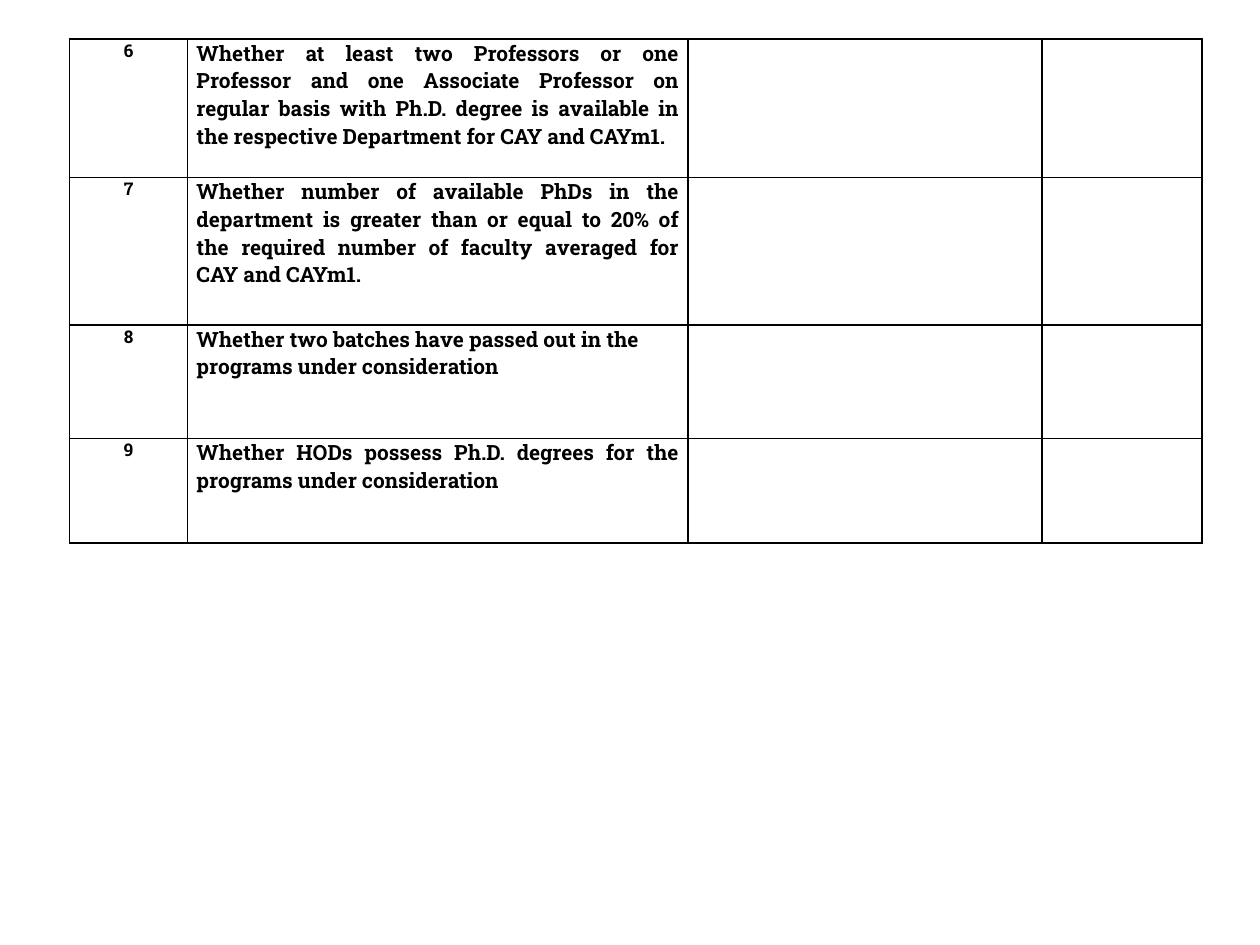
from lxml.etree import SubElement
from pptx import Presentation
from pptx.dml.color import RGBColor
from pptx.enum.text import PP_ALIGN as Align
from pptx.oxml.ns import qn
from pptx.util import Inches, Pt

COLORS = {"ink": "000000", "paper": "FFFFFF"}
FONT = "Roboto Slab"
COLUMN_WIDTHS = [0.94, 3.97, 2.81, 1.27]
# Row height, number, criterion, alignment of the criterion
CRITERIA = [
    (1.1, "6", "Whether at least two Professors or one Professor and one "
     "Associate Professor on regular basis with Ph.D. degree is available in "
     "the respective Department for CAY and CAYm1.", Align.JUSTIFY),
    (1.17, "7", "Whether number of available PhDs in the department is greater "
     "than or equal to 20% of the required number of faculty averaged for CAY "
     "and CAYm1.", Align.JUSTIFY),
    (0.9, "8", "Whether two batches have passed out in the programs under "
     "consideration", Align.LEFT),
    (0.83, "9", "Whether HODs possess Ph.D. degrees for the programs under "
     "consideration", Align.JUSTIFY),
]


def style_cell(cell):
    """Give the cell black borders, a plain fill and narrow margins."""
    properties = cell._tc.get_or_add_tcPr()
    for side in ("lnL", "lnR", "lnT", "lnB"):
        line = SubElement(properties, qn(f"a:{side}"), w=str(Pt(1)))
        fill = SubElement(line, qn("a:solidFill"))
        SubElement(fill, qn("a:srgbClr"), val=COLORS["ink"])
    cell.fill.solid()
    cell.fill.fore_color.rgb = RGBColor.from_string(COLORS["paper"])
    cell.margin_left = cell.margin_right = Inches(0.07)
    cell.margin_top = cell.margin_bottom = 0


def write_cell(cell, text, size, alignment):
    paragraph = cell.text_frame.paragraphs[0]
    paragraph.alignment = alignment
    run = paragraph.add_run()
    run.text = text
    run.font.name = FONT
    run.font.size = Pt(size)
    run.font.bold = True
    run.font.color.rgb = RGBColor.from_string(COLORS["ink"])


def add_criteria_table(slide):
    height = sum(row[0] for row in CRITERIA)
    frame = slide.shapes.add_table(
        len(CRITERIA), len(COLUMN_WIDTHS), Inches(0.55), Inches(0.31),
        Inches(sum(COLUMN_WIDTHS)), Inches(height))
    table = frame.table
    table.first_row = table.horz_banding = False
    for column, width in zip(table.columns, COLUMN_WIDTHS):
        column.width = Inches(width)
    for cell in table.iter_cells():
        style_cell(cell)
    for row, (height, number, criterion, alignment) in zip(table.rows, CRITERIA):
        row.height = Inches(height)
        write_cell(row.cells[0], number, 10, Align.CENTER)
        write_cell(row.cells[1], criterion, 12, alignment)


def main():
    presentation = Presentation()
    presentation.slide_width = Inches(10)
    presentation.slide_height = Inches(7.5)
    # Blank layout: the slide holds only the table
    slide = presentation.slides.add_slide(presentation.slide_layouts[6])
    add_criteria_table(slide)
    presentation.save("out.pptx")


if __name__ == "__main__":
    main()
